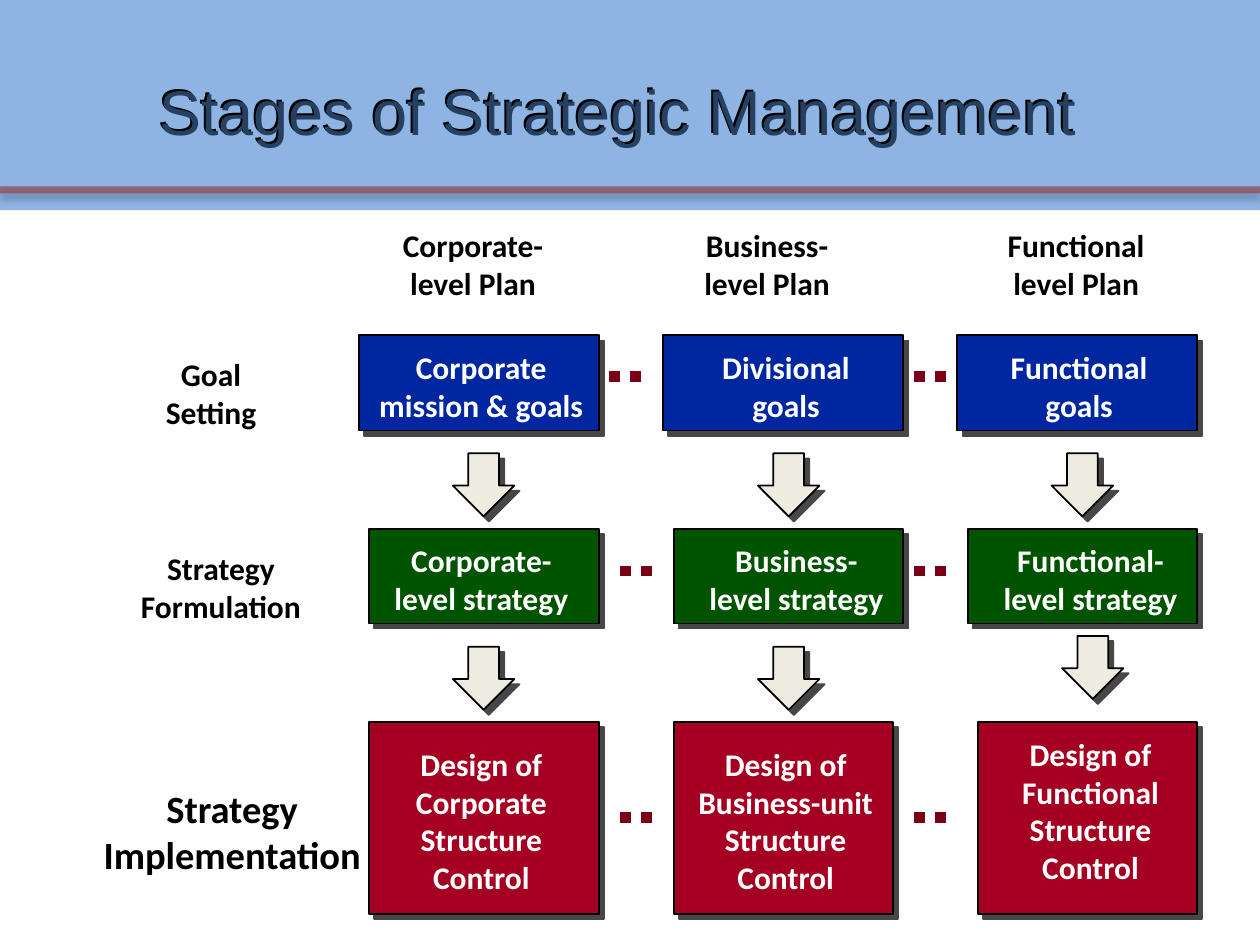
import pptx
import pptx.util
from pptx.dml.color import RGBColor
from pptx.enum.dml import MSO_LINE
from pptx.enum.shapes import MSO_CONNECTOR, MSO_SHAPE
from pptx.enum.text import MSO_ANCHOR, PP_ALIGN
from pptx.oxml import parse_xml
from pptx.oxml.ns import nsdecls, qn

Cm, Pt = pptx.util.Cm, pptx.util.Pt

COLORS = {
    "band": "8EB4E3", "rule": "953735", "title": "254061",
    "goal": "00279F", "formulation": "005400", "implementation": "A50021",
    "arrow": "EEECE1", "dots": "790015", "shadow": "474747",
    "black": "000000", "white": "FFFFFF",
}


def rgb(name):
    return RGBColor.from_string(COLORS[name])


def add_effects(props, color=None, dist=0, angle=0, blur=0, alpha=100):
    """Append an effect list to the properties, empty when no colour is given."""
    inner = ""
    if color:
        inner = (f'<a:outerShdw blurRad="{Pt(blur)}" dist="{Pt(dist)}" dir="{angle * 60000}" '
                 f'algn="ctr" rotWithShape="0"><a:srgbClr val="{COLORS[color]}">'
                 f'<a:alpha val="{alpha * 1000}"/></a:srgbClr></a:outerShdw>')
    props.append(parse_xml(f'<a:effectLst {nsdecls("a")}>{inner}</a:effectLst>'))


def add_label(s, text, x, y, w, h=2.34, size=18, color="black", wrap=True):
    sp = s.shapes.add_textbox(Cm(x), Cm(y), Cm(w), Cm(h))
    tf = sp.text_frame
    tf.word_wrap = wrap
    tf.text = text
    for p in tf.paragraphs:
        p.alignment = PP_ALIGN.CENTER
        for r in p.runs:
            r.font.size, r.font.bold, r.font.name = Pt(size), True, "Calibri"
            r.font.color.rgb = rgb(color)


def add_block(s, kind, x, y, w, h, fill):
    """Add a filled preset shape with a thin outline and a hard shadow."""
    sp = s.shapes.add_shape(kind, Cm(x), Cm(y), Cm(w), Cm(h))
    sp.fill.solid()
    sp.fill.fore_color.rgb = rgb(fill)
    sp.line.color.rgb = rgb("black")
    sp.line.width = Pt(1)
    add_effects(sp.element.spPr, "shadow", dist=4.2, angle=45)


def add_line(s, x, y, length, color, width):
    line = s.shapes.add_connector(MSO_CONNECTOR.STRAIGHT, Cm(x), Cm(y), Cm(x + length), Cm(y))
    line.line.color.rgb = rgb(color)
    line.line.width = Pt(width)
    return line


def add_header(s, w, h):
    band = s.shapes.add_shape(MSO_SHAPE.RECTANGLE, 0, 0, Cm(w), Cm(h))
    band.shadow.inherit = False
    band.fill.solid()
    band.fill.fore_color.rgb = rgb("band")
    band.line.fill.background()

    rule = add_line(s, 0, h - 0.41, w, "rule", 4)
    clr = next(rule.element.iter(qn("a:srgbClr")))
    clr.append(parse_xml(f'<a:alpha {nsdecls("a")} val="61000"/>'))
    add_effects(rule.element.spPr, "black", dist=3, angle=90, blur=4, alpha=40)

    title = s.shapes.title
    title.element.getparent().append(title.element)  # bring in front of the band
    title.left, title.top, title.width, title.height = Cm(2.11), Cm(1.27), Cm(20.7), Cm(1.9)
    title.fill.background()
    add_effects(title.element.spPr, "black", dist=1.5, angle=225)
    tf = title.text_frame
    tf.text = "Stages of Strategic Management"
    tf.vertical_anchor = MSO_ANCHOR.MIDDLE
    p = tf.paragraphs[0]
    p.alignment = PP_ALIGN.CENTER
    r = p.runs[0]
    r.font.size, r.font.name = Pt(36), "Arial"
    r.font.color.rgb = rgb("title")


def add_stage(s, y, h, fill, boxes, dots_x, dots_dy):
    """Add one row: boxes of (text, x, w, text x, text w, text dy) and the dots between."""
    for text, x, w, text_x, text_w, text_dy in boxes:
        add_block(s, MSO_SHAPE.RECTANGLE, x, y, w, h, fill)
        text_h = 1.8 if text.count("\n") == 1 else 3.38
        add_label(s, text, text_x, y + text_dy, text_w, text_h, color="white", wrap=False)
    for x in dots_x:
        dots = add_line(s, x, y + dots_dy, 0.84, "dots", 6)
        dots.line.dash_style = MSO_LINE.ROUND_DOT
        add_effects(dots.element.spPr)


def add_labels(s):
    for text, x, w in [("Corporate-\nlevel Plan", 7.26, 4.55),
                       ("Business-\nlevel Plan", 13.47, 3.99),
                       ("Functional\nlevel Plan", 19.46, 4.47)]:
        add_label(s, text, x, 4.44, w)
    add_label(s, "Goal\nSetting", 2.73, 7.04, 3.05)
    add_label(s, "Strategy\nFormulation", 1.93, 10.95, 5.05)
    add_label(s, "Strategy\nImplementation", 1.29, 15.7, 6.78, 2.16, size=22)


def add_arrows(s):
    for x, y in [(9.13, 9.14), (15.28, 9.14), (21.2, 9.14),
                 (9.13, 13.04), (15.28, 13.04), (21.41, 12.82)]:
        add_block(s, MSO_SHAPE.DOWN_ARROW, x, y, 1.24, 1.27, "arrow")


def main():
    prs = pptx.Presentation()
    prs.slide_width, prs.slide_height = Cm(25.4), Cm(19.05)
    s = prs.slides.add_slide(prs.slide_layouts[5])
    add_header(s, 25.4, 4.24)
    add_labels(s)
    add_stage(s, 6.76, 1.92, "goal", [
        ("Corporate\nmission & goals", 7.24, 4.83, 7.31, 4.78, 0.13),
        ("Divisional\ngoals", 13.36, 4.85, 14.23, 3.23, 0.13),
        ("Functional\ngoals", 19.3, 4.83, 20.04, 3.43, 0.13),
    ], (12.28, 18.43), 0.83)
    add_stage(s, 10.66, 1.91, "formulation", [
        ("Corporate-\nlevel strategy", 7.44, 4.63, 7.66, 4.09, 0.13),
        ("Business-\nlevel strategy", 13.59, 4.62, 14.01, 4.09, 0.13),
        ("Functional-\nlevel strategy", 19.51, 4.62, 19.94, 4.09, 0.13),
    ], (12.5, 18.43), 0.85)
    add_stage(s, 14.55, 3.87, "implementation", [
        ("Design of\nCorporate\nStructure\nControl", 7.44, 4.63, 8.04, 3.33, 0.34),
        ("Design of\nBusiness-unit\nStructure\nControl", 13.59, 4.41, 13.77, 4.14, 0.34),
        ("Design of\nFunctional\nStructure\nControl", 19.71, 4.42, 20.27, 3.43, 0.14),
    ], (12.5, 18.43), 1.93)
    add_arrows(s)
    prs.save("out.pptx")


if __name__ == "__main__":
    main()
